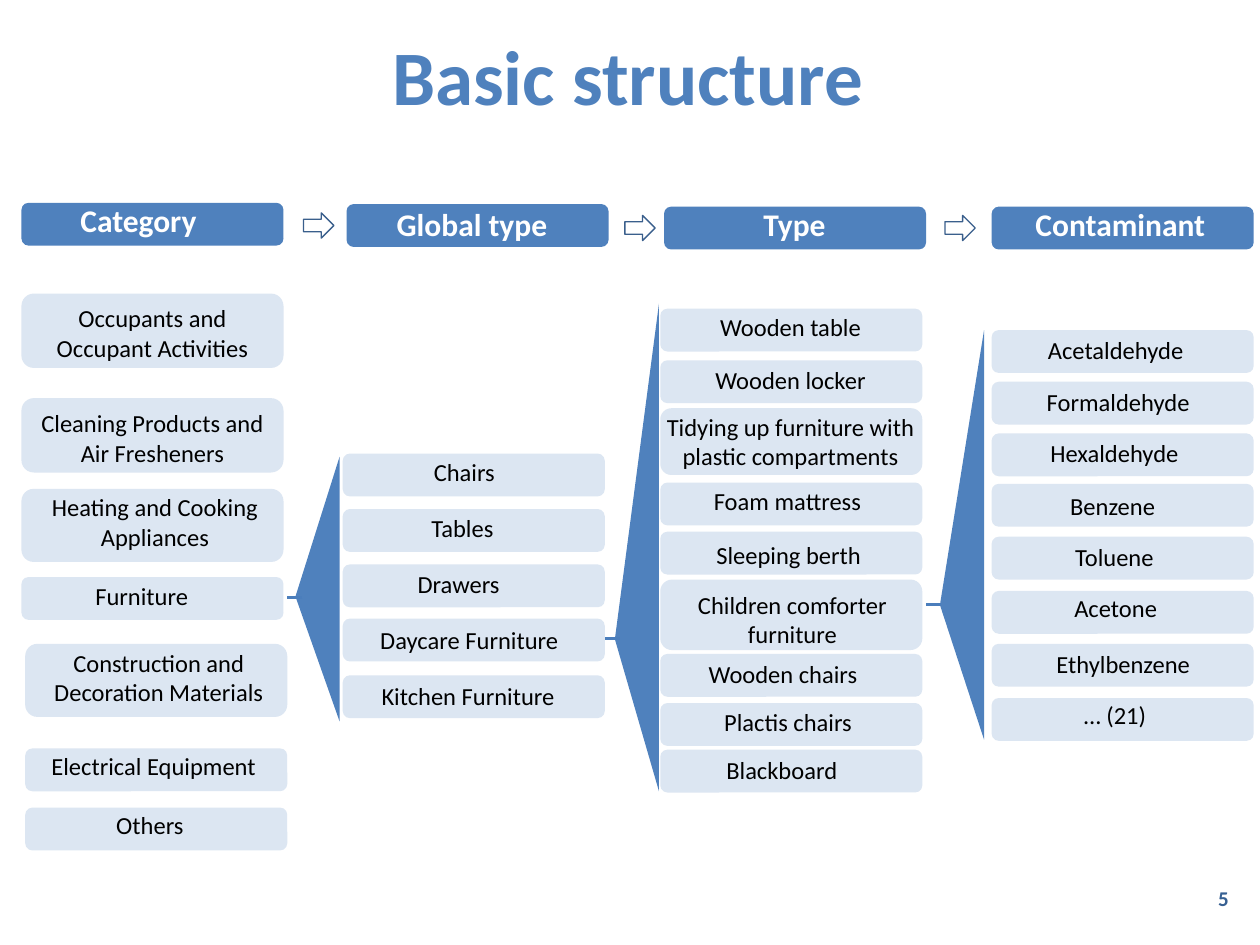
import pptx
import pptx.util
import pptx.dml.color
import pptx.enum.shapes
import pptx.enum.text
import pptx.oxml.ns
import lxml.etree

Inches = pptx.util.Inches
Shape = pptx.enum.shapes.MSO_SHAPE
Align = pptx.enum.text.PP_ALIGN
Anchor = pptx.enum.text.MSO_ANCHOR
COLORS = {
    name: pptx.dml.color.RGBColor.from_string(value)
    for name, value in {
        "blue": "4F81BD", "pale": "DCE6F2", "white": "FFFFFF", "black": "000000",
        "connector": "4B7EBC", "outline": "3A5F8C", "number": "376092",
    }.items()
}
FORMATS = {
    "title": {"size": 44, "bold": True, "color": "blue"},
    "header": {"size": 18, "bold": True, "color": "white"},
    "item": {"size": 14, "bold": False, "color": "black"},
    "number": {"size": 12, "bold": True, "color": "number"},
}
BOX_WIDTH = 2.08
BOX_HEIGHT = 0.34

presentation = pptx.Presentation()
presentation.slide_width = Inches(10)
presentation.slide_height = Inches(7.5)
slide = presentation.slides.add_slide(presentation.slide_layouts[5])


def write_text(shape, text, style, alignment=Align.CENTER, wrap=True, anchor=Anchor.TOP):
    frame = shape.text_frame
    frame.text = text
    frame.word_wrap = wrap
    frame.vertical_anchor = anchor
    values = FORMATS[style]
    font_values = {"name": "Calibri", "size": pptx.util.Pt(values["size"]), "bold": values["bold"]}
    for paragraph in frame.paragraphs:
        paragraph.alignment = alignment
        for run in paragraph.runs:
            for attribute, value in font_values.items():
                setattr(run.font, attribute, value)
            run.font.color.rgb = COLORS[values["color"]]


def add_filled(kind, left, top, width, height, fill):
    shape = slide.shapes.add_shape(kind, *map(Inches, (left, top, width, height)))
    shape.shadow.inherit = False
    shape.fill.solid()
    shape.fill.fore_color.rgb = COLORS[fill]
    shape.line.fill.background()
    return shape


title = slide.shapes.title
for attribute, value in {"left": 0.3, "top": -0.03, "width": 9.37, "height": 1.25}.items():
    setattr(title, attribute, Inches(value))
write_text(title, "Basic structure", "title", anchor=Anchor.MIDDLE)

headers = [
    ("Category", 0.17, 1.61, 0.54, 1.55, 1.13),
    ("Global type", 2.75, 1.62, 3.05, 1.58, 1.41),
    ("Type", 5.27, 1.64, 5.96, 1.58, 0.7),
    ("Contaminant", 7.87, 1.64, 8.12, 1.58, 1.56),
]
for text, left, top, label_left, label_top, label_width in headers:
    add_filled(Shape.ROUNDED_RECTANGLE, left, top, BOX_WIDTH, BOX_HEIGHT, "blue")
    label = slide.shapes.add_textbox(*map(Inches, (label_left, label_top, label_width, 0.4)))
    write_text(label, text, "header", Align.LEFT, wrap=False)

# Each row: text, box top, box height, label left, label top, label width
columns = [
    (0.17, [
        ("Occupants and Occupant Activities", 2.33, 0.59, 0.17, 2.36, 2.08),
        ("Cleaning Products and Air Fresheners", 3.16, 0.59, 0.17, 3.19, 2.08),
        ("Heating and Cooking Appliances", 3.88, 0.58, 0.17, 3.86, 2.12),
        ("Furniture", 4.58, BOX_HEIGHT, 0.65, 4.56, 0.95),
    ]),
    (0.2, [
        ("Construction and Decoration Materials", 5.11, 0.58, 0.2, 5.09, 2.12),
        ("Electrical Equipment", 5.94, BOX_HEIGHT, 0.3, 5.91, 1.84),
        ("Others", 6.41, BOX_HEIGHT, 0.82, 6.38, 0.74),
    ]),
    (2.72, [
        ("Chairs", 3.6, BOX_HEIGHT, 3.34, 3.58, 0.69),
        ("Tables", 4.04, BOX_HEIGHT, 3.32, 4.02, 0.7),
        ("Drawers", 4.48, BOX_HEIGHT, 3.21, 4.47, 0.86),
        ("Daycare Furniture", 4.91, BOX_HEIGHT, 2.91, 4.91, 1.63),
        ("Kitchen Furniture", 5.36, BOX_HEIGHT, 2.92, 5.36, 1.59),
    ]),
    (5.24, [
        ("Wooden table", 2.45, BOX_HEIGHT, 5.61, 2.43, 1.33),
        ("Wooden locker", 2.86, BOX_HEIGHT, 5.57, 2.85, 1.41),
        ("Tidying up furniture with\nplastic compartments", 3.24, 0.53, 5.16, 3.22, 2.23),
        ("Foam mattress", 3.83, BOX_HEIGHT, 5.56, 3.81, 1.38),
        ("Sleeping berth", 4.22, BOX_HEIGHT, 5.58, 4.24, 1.36),
        ("Children comforter\nfurniture", 4.6, 0.56, 5.41, 4.63, 1.76),
        ("Wooden chairs", 5.19, BOX_HEIGHT, 5.52, 5.18, 1.39),
        ("Plactis chairs", 5.58, BOX_HEIGHT, 5.64, 5.56, 1.23),
        ("Blackboard", 5.95, BOX_HEIGHT, 5.66, 5.94, 1.09),
    ]),
    (7.87, [
        ("Acetaldehyde", 2.62, BOX_HEIGHT, 8.21, 2.61, 1.29),
        ("Formaldehyde", 3.03, BOX_HEIGHT, 8.2, 3.02, 1.35),
        ("Hexaldehyde", 3.44, BOX_HEIGHT, 8.23, 3.43, 1.23),
        ("Benzene", 3.84, BOX_HEIGHT, 8.39, 3.85, 0.88),
        ("Toluene", 4.26, BOX_HEIGHT, 8.43, 4.25, 0.83),
        ("Acetone", 4.69, BOX_HEIGHT, 8.42, 4.66, 0.87),
        ("Ethylbenzene", 5.11, BOX_HEIGHT, 8.28, 5.1, 1.27),
        ("… (21)", 5.54, BOX_HEIGHT, 8.5, 5.51, 0.7),
    ]),
]
for left, rows in columns:
    for text, top, height, label_left, label_top, label_width in rows:
        add_filled(Shape.ROUNDED_RECTANGLE, left, top, BOX_WIDTH, height, "pale")
        label_height = 0.57 if height > BOX_HEIGHT else BOX_HEIGHT
        label = slide.shapes.add_textbox(*map(Inches, (label_left, label_top, label_width, label_height)))
        write_text(label, text, "item", wrap=height > BOX_HEIGHT and "\n" not in text)

for left, top in [(2.41, 1.69), (4.96, 1.71), (7.5, 1.71)]:
    arrow = add_filled(Shape.RIGHT_ARROW, left, top, 0.24, 0.2, "white")
    arrow.line.color.rgb = COLORS["outline"]
    arrow.line.width = pptx.util.Pt(0.75)

for left, top, width, apex in [(1.47, 4.5, 2.1, 0.472), (3.12, 4.17, 3.87, 0.312), (6.01, 4.07, 3.25, 0.329)]:
    triangle = add_filled(Shape.ISOSCELES_TRIANGLE, left, top, width, 0.35, "blue")
    triangle.adjustments[0] = apex
    triangle.rotation = 270

for start, y in [(2.4, 4.74), (4.92, 5.07), (7.47, 4.8)]:
    connector = slide.shapes.add_connector(
        pptx.enum.shapes.MSO_CONNECTOR.STRAIGHT, *map(Inches, (start, y, start - 0.12, y)))
    connector.line.color.rgb = COLORS["connector"]
    connector.line.width = pptx.util.Pt(1.5)
    lxml.etree.SubElement(connector.element.spPr, pptx.oxml.ns.qn("a:effectLst"))

number = slide.shapes.add_textbox(*map(Inches, (9.57, 6.93, 0.43, 0.4)))
write_text(number, "5", "number", Align.LEFT, anchor=Anchor.MIDDLE)

presentation.save("out.pptx")
